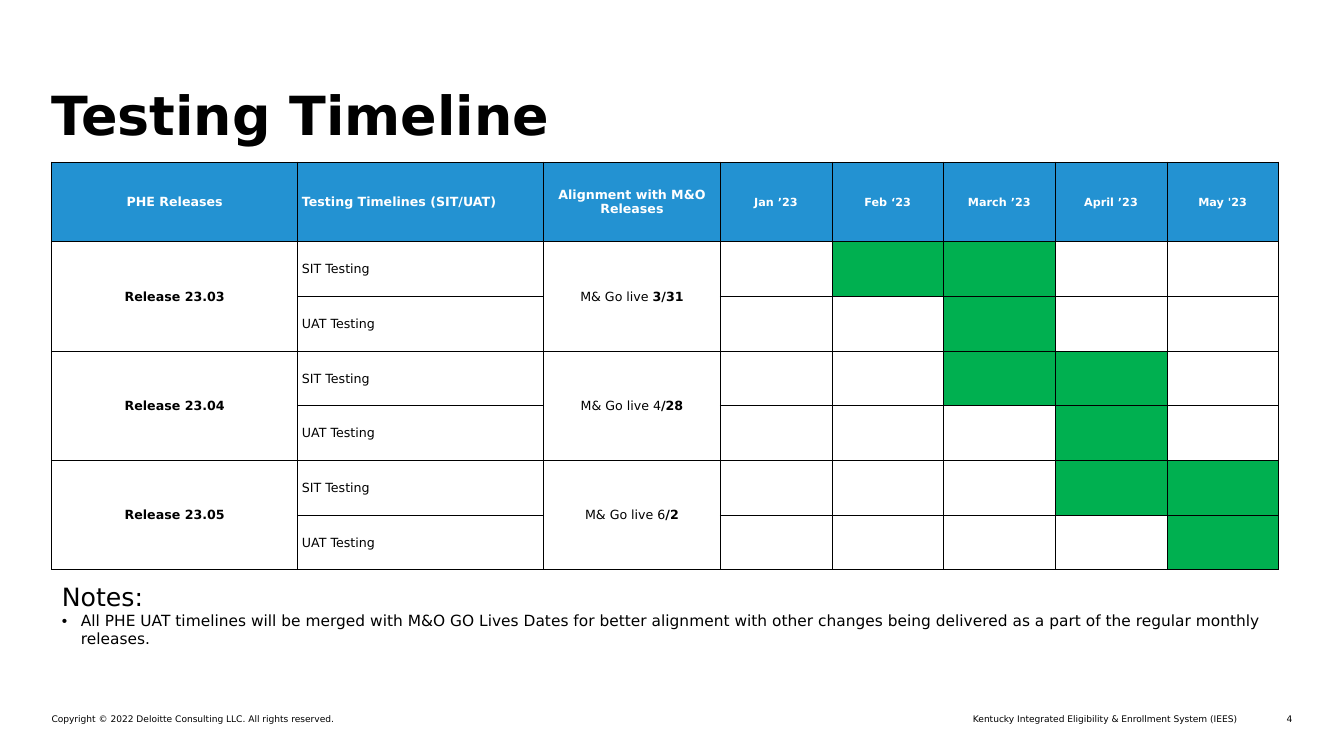
from dataclasses import dataclass

from lxml import etree
from pptx import Presentation
from pptx import util as u
from pptx.dml.color import RGBColor
from pptx.enum import text
from pptx.oxml import ns

Cm, Pt = u.Cm, u.Pt
LEFT, CENTER, RIGHT = text.PP_ALIGN.LEFT, text.PP_ALIGN.CENTER, text.PP_ALIGN.RIGHT


@dataclass(frozen=True)
class Theme:
    """Colours, font and type sizes of the slide."""
    font: str = "DejaVu Sans"
    ink: str = "000000"
    paper: str = "FFFFFF"
    header: str = "2392D2"
    active: str = "00B050"
    title: float = 38.5
    notes: float = 18
    bullet: float = 11
    cell: float = 9
    month: float = 8
    footer: float = 6.5
    border: float = 0.5


T = Theme()
MONTHS = ["Jan ’23", "Feb ‘23", "March ’23", "April ’23", "May '23"]
HEADINGS = ["PHE Releases", "Testing Timelines (SIT/UAT)", "Alignment with M&O Releases"]
RELEASES = [
    ("Release 23.03", "M& Go live ", "3/31"),
    ("Release 23.04", "M& Go live 4", "/28"),
    ("Release 23.05", "M& Go live 6", "/2"),
]
PHASES = [("SIT Testing", (1, 2)), ("UAT Testing", (2,))]


def add_run(p, words, size, color=T.ink, bold=False):
    """Append a formatted run to a paragraph."""
    r = p.add_run()
    r.text = words
    r.font.name, r.font.size, r.font.bold = T.font, Pt(size), bold
    r.font.color.rgb = RGBColor.from_string(color)


def add_text(s, box, words, size, align=LEFT, bold=False, spacing=1.0,
             anchor=text.MSO_ANCHOR.TOP):
    """Place a wrapped text box without insets and return its frame."""
    tf = s.shapes.add_textbox(*map(Cm, box)).text_frame
    tf.word_wrap = True
    tf.vertical_anchor = anchor
    tf.margin_left = tf.margin_right = tf.margin_top = tf.margin_bottom = 0
    p = tf.paragraphs[0]
    p.alignment, p.line_spacing = align, spacing
    add_run(p, words, size, bold=bold)
    return tf


def add_borders(cell):
    """Draw a thin line on all four sides of a cell."""
    tcPr = cell._tc.get_or_add_tcPr()
    for side in ("lnL", "lnR", "lnT", "lnB"):
        ln = etree.SubElement(tcPr, ns.qn(f"a:{side}"), w=str(Pt(T.border)))
        fill = etree.SubElement(ln, ns.qn("a:solidFill"))
        etree.SubElement(fill, ns.qn("a:srgbClr"), val=T.ink)


def paint_cell(cell, color):
    """Give a cell its borders, fill, margins and anchor."""
    add_borders(cell)
    cell.fill.solid()
    cell.fill.fore_color.rgb = RGBColor.from_string(color)
    cell.margin_left = cell.margin_right = cell.margin_top = Cm(0.02)
    cell.margin_bottom = 0
    cell.vertical_anchor = text.MSO_ANCHOR.MIDDLE


def write_cell(cell, *parts, size=T.cell, color=T.ink, align=CENTER):
    """Write (words, bold) parts into a cell."""
    p = cell.text_frame.paragraphs[0]
    p.alignment = align
    if align == LEFT:
        cell.margin_left = Cm(0.11)
    for words, bold in parts:
        add_run(p, words, size, color, bold)


def add_timeline(s, box):
    """Build the release table with its month bars."""
    _, _, width, height = box
    lead, head = [6.2, 6.2, 4.45], 2.01
    month_width = (width - sum(lead)) / len(MONTHS)
    n_rows = 1 + len(RELEASES) * len(PHASES)
    table = s.shapes.add_table(n_rows, len(lead) + len(MONTHS), *map(Cm, box)).table
    for col, w in zip(table.columns, lead + [month_width] * len(MONTHS)):
        col.width = Cm(w)
    for i, row in enumerate(table.rows):
        row.height = Cm((height - head) / (n_rows - 1) if i else head)
        for cell in row.cells:
            paint_cell(cell, T.paper if i else T.header)

    for i, words in enumerate(HEADINGS + MONTHS):
        write_cell(table.cell(0, i), (words, True), color=T.paper,
                   size=T.cell if i < len(lead) else T.month,
                   align=LEFT if i == 1 else CENTER)

    for i, (release, live, date) in enumerate(RELEASES):
        top = 1 + i * len(PHASES)
        for col in (0, 2):
            table.cell(top, col).merge(table.cell(top + len(PHASES) - 1, col))
        write_cell(table.cell(top, 0), (release, True))
        write_cell(table.cell(top, 2), (live, False), (date, True))
        for j, (phase, months) in enumerate(PHASES):
            write_cell(table.cell(top + j, 1), (phase, False), align=LEFT)
            for month in months:
                bar = table.cell(top + j, len(lead) + i + month)
                bar.fill.fore_color.rgb = RGBColor.from_string(T.active)


def add_notes(s, box):
    """Write the notes heading and its bullet."""
    tf = add_text(s, box, "Notes:", T.notes, spacing=0.95)
    p = tf.add_paragraph()
    p.line_spacing, p.space_after = 0.95, Pt(6)
    pPr = p._p.get_or_add_pPr()
    pPr.set("marL", str(Cm(0.48)))
    pPr.set("indent", str(-Cm(0.48)))
    etree.SubElement(pPr, ns.qn("a:buFont"), typeface="Arial")
    etree.SubElement(pPr, ns.qn("a:buChar"), char="•")
    add_run(p, "All PHE UAT timelines will be merged with M&O GO Lives Dates for better "
               "alignment with other changes being delivered as a part of the regular "
               "monthly releases.", T.bullet)


def add_footer(s, box):
    """Set the copyright, system name and page number on one line."""
    x, y, width, height = box
    add_text(s, (x, y, 14.88, height),
             "Copyright © 2022 Deloitte Consulting LLC. All rights reserved.", T.footer)
    add_text(s, (x + 16.3, y, 13.59, height),
             "Kentucky Integrated Eligibility & Enrollment System (IEES)", T.footer, RIGHT)
    add_text(s, (x + width - 0.86, y, 0.86, height), "4", T.footer, RIGHT)


def main():
    """Build and save the slide."""
    prs = Presentation()
    prs.slide_width, prs.slide_height = Cm(33.87), Cm(19.05)
    s = prs.slides.add_slide(prs.slide_layouts[6])
    add_text(s, (1.3, 2.79, 31.27, 0.94), "Testing Timeline", T.title, bold=True,
             spacing=0.95, anchor=text.MSO_ANCHOR.BOTTOM)
    add_timeline(s, (1.3, 4.08, 30.92, 10.28))
    add_notes(s, (1.56, 14.71, 31.27, 1.98))
    add_footer(s, (1.3, 17.98, 31.27, 0.28))
    prs.save("out.pptx")


if __name__ == "__main__":
    main()
